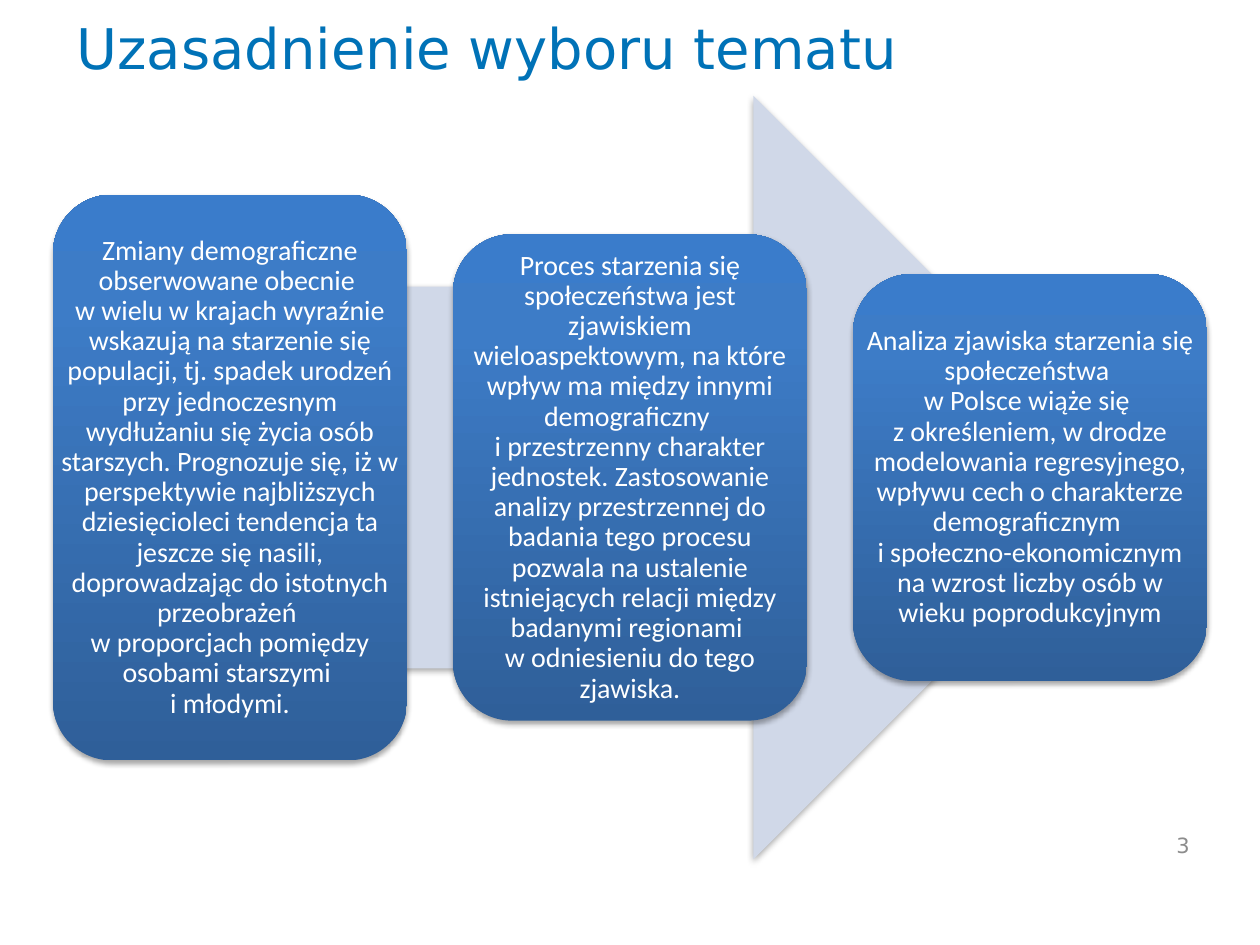
from copy import deepcopy

from lxml.etree import SubElement
from pptx import Presentation
from pptx.dml.color import RGBColor
from pptx.enum.shapes import MSO_SHAPE
from pptx.enum.text import MSO_ANCHOR, PP_ALIGN
from pptx.oxml.ns import qn
from pptx.util import Inches, Pt

TITLE_BLUE = RGBColor(0x00, 0x72, 0xB7)
ARROW_FILL = RGBColor(0xD0, 0xD8, 0xE8)
NUMBER_GRAY = RGBColor(0x8C, 0x8C, 0x8C)
WHITE = RGBColor(0xFF, 0xFF, 0xFF)
BLACK = RGBColor(0x00, 0x00, 0x00)
# Gradient stops from the bottom of a card to its top, in percent
CARD_STOPS = [
    (0, RGBColor(0x2F, 0x5F, 0x99)),
    (80, RGBColor(0x3D, 0x7C, 0xC7)),
    (100, RGBColor(0x3A, 0x7C, 0xCB)),
]

TITLE_FORMAT = {"name": "DejaVu Sans", "size": Pt(32)}
CARD_FORMAT = {"name": "Calibri", "size": Pt(16)}
NUMBER_FORMAT = {"name": "DejaVu Sans", "size": Pt(12)}

CENTER_Y = 3.79
CARD_LEFT, CARD_STEP, CARD_WIDTH = 0.42, 3.175, 2.81
FIRST_HEIGHT, HEIGHT_STEP = 4.49, 0.63

CARDS = [
    "Zmiany demograficzne obserwowane obecnie \n"
    "w wielu w krajach wyraźnie wskazują na starzenie się populacji, "
    "tj. spadek urodzeń przy jednoczesnym wydłużaniu się życia osób "
    "starszych. Prognozuje się, iż w perspektywie najbliższych "
    "dziesięcioleci tendencja ta jeszcze się nasili, doprowadzając do "
    "istotnych przeobrażeń \nw proporcjach pomiędzy osobami starszymi \n"
    "i młodymi.",
    "Proces starzenia się społeczeństwa jest zjawiskiem "
    "wieloaspektowym, na które wpływ ma między innymi demograficzny \n"
    "i przestrzenny charakter jednostek. Zastosowanie analizy "
    "przestrzennej do badania tego procesu pozwala na ustalenie "
    "istniejących relacji między badanymi regionami \n"
    "w odniesieniu do tego zjawiska.",
    "Analiza zjawiska starzenia się społeczeństwa \n"
    "w Polsce wiąże się \nz określeniem, w drodze modelowania "
    "regresyjnego, wpływu cech o charakterze demograficznym \n"
    "i społeczno-ekonomicznym na wzrost liczby osób w wieku "
    "poprodukcyjnym",
]


def add_color(parent, color):
    return SubElement(parent, qn("a:srgbClr"), val=str(color))


def add_shadow(shape):
    """Cast a soft shadow straight down."""
    shape.shadow.inherit = False
    effects = shape._element.spPr.find(qn("a:effectLst"))
    shadow = SubElement(effects, qn("a:outerShdw"), blurRad=str(Pt(3.1)),
                        dist=str(Pt(1.8)), dir="5400000", rotWithShape="0")
    SubElement(add_color(shadow, BLACK), qn("a:alpha"), val="35000")


def add_panel(page, kind, area):
    shape = page.shapes.add_shape(kind, *map(Inches, area))
    shape.line.fill.background()
    add_shadow(shape)
    return shape


def fill_gradient(shape):
    shape.fill.gradient()
    shape.fill.gradient_angle = 90
    stops = shape._element.spPr.find(qn("a:gradFill")).find(qn("a:gsLst"))
    for stop in list(stops):
        stops.remove(stop)
    for percent, color in CARD_STOPS:
        stop = SubElement(stops, qn("a:gs"), pos=str(percent * 1000))
        add_color(stop, color)


def add_text(page, area, text, font_format, color, align, insets=None):
    box = page.shapes.add_textbox(*map(Inches, area))
    frame = box.text_frame
    frame.word_wrap = True
    frame.vertical_anchor = MSO_ANCHOR.MIDDLE
    for side, inset in (insets or {}).items():
        setattr(frame, f"margin_{side}", Inches(inset))
    para = frame.paragraphs[0]
    para.text = text
    para.alignment = align
    for span in para.runs:
        for name, value in font_format.items():
            setattr(span.font, name, value)
        span.font.color.rgb = color
    # Line breaks take the same size as the text
    for line_break in para._p.findall(qn("a:br")):
        line_break.append(deepcopy(para.runs[0]._r.rPr))
    return para


def add_card(page, index, text):
    height = FIRST_HEIGHT - index * HEIGHT_STEP
    left = CARD_LEFT + index * CARD_STEP
    area = (left, CENTER_Y - height / 2, CARD_WIDTH, height)
    fill_gradient(add_panel(page, MSO_SHAPE.ROUNDED_RECTANGLE, area))
    insets = dict.fromkeys(("left", "top", "right", "bottom"), 0.06)
    para = add_text(page, area, text, CARD_FORMAT, WHITE,
                    PP_ALIGN.CENTER, insets)
    para.line_spacing = 0.9


def main():
    deck = Presentation()
    deck.slide_width, deck.slide_height = Inches(10), Inches(7.5)
    page = deck.slides.add_slide(deck.slide_layouts[6])

    # Title, kept in the upper part of its box
    add_text(page, (0.51, 0, 9, 1.25), "Uzasadnienie wyboru tematu",
             TITLE_FORMAT, TITLE_BLUE, PP_ALIGN.LEFT, {"bottom": 0.55})

    # Arrow behind the cards
    arrow = add_panel(page, MSO_SHAPE.RIGHT_ARROW, (0.98, 0.76, 8.03, 6.06))
    arrow.fill.solid()
    arrow.fill.fore_color.rgb = ARROW_FILL

    # Cards, each lower than the one before
    for index, text in enumerate(CARDS):
        add_card(page, index, text)

    # Page number
    add_text(page, (8.86, 6.51, 0.68, 0.4), "3", NUMBER_FORMAT,
             NUMBER_GRAY, PP_ALIGN.RIGHT)

    deck.save("out.pptx")


if __name__ == "__main__":
    main()
